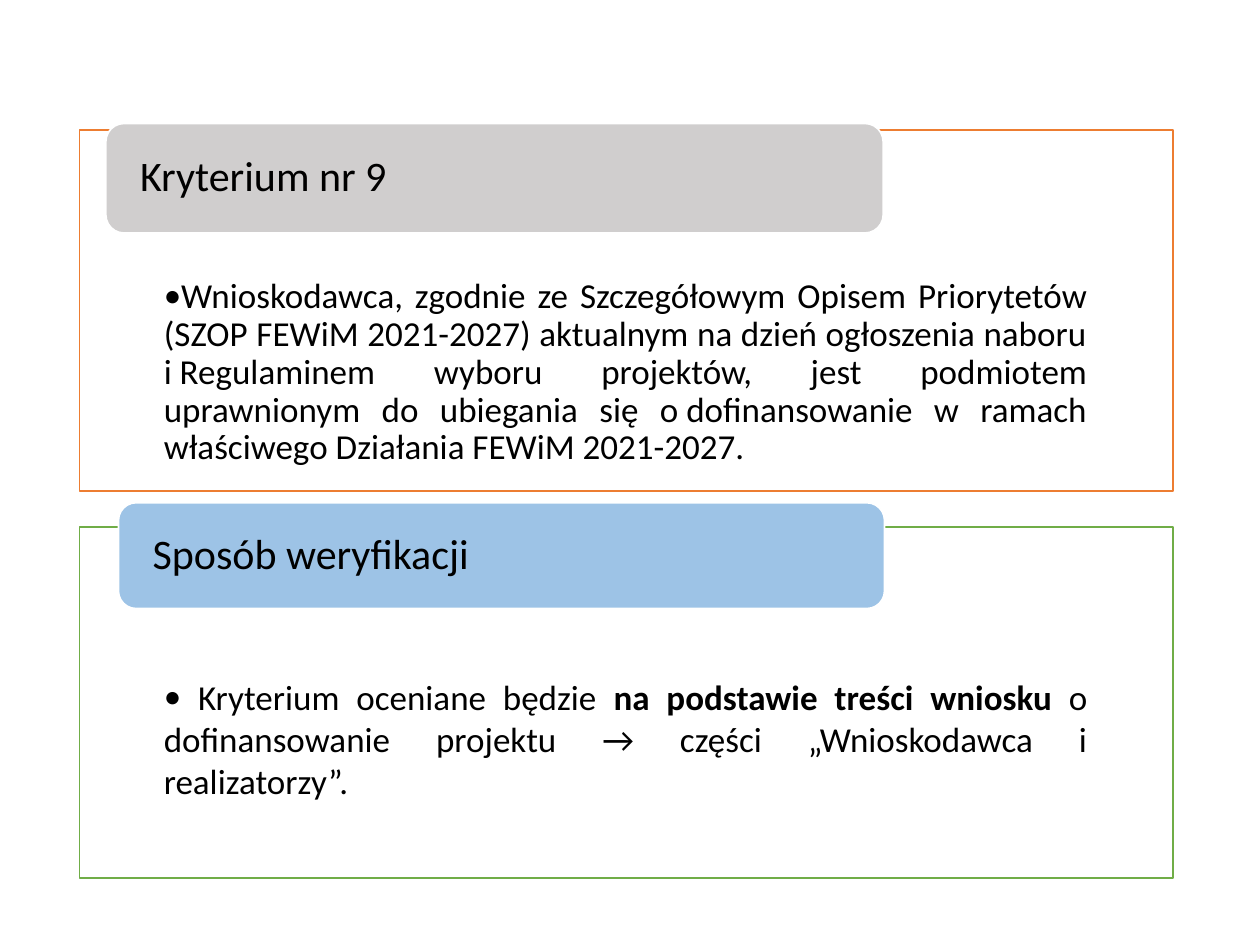
from pptx import Presentation
from pptx.dml.color import RGBColor
from pptx.enum.shapes import MSO_SHAPE as Shape
from pptx.enum.text import MSO_ANCHOR as Anchor, PP_ALIGN as Align
from pptx.oxml.ns import qn
from pptx.util import Inches, Pt
from lxml.etree import SubElement

COLORS = {
    "white": "FFFFFF",
    "black": "000000",
    "orange": "ED7D31",
    "green": "70AD47",
    "gray": "D0CECE",
    "blue": "9DC3E6",
}
FONT = "Calibri"
PANEL_LEFT, PANEL_WIDTH = 0.63, 8.68
HARD_SPACE = chr(160)

CRITERION = [
    ("Wnioskodawca, zgodnie ze Szczegółowym Opisem Priorytetów "
     "(SZOP FEWiM 2021-2027) aktualnym na dzień ogłoszenia naboru "
     f"i{HARD_SPACE}Regulaminem wyboru projektów, jest podmiotem uprawnionym do "
     f"ubiegania się o{HARD_SPACE}dofinansowanie w ramach właściwego Działania "
     "FEWiM 2021-2027.", False),
]
VERIFICATION = [
    (" ", True),
    ("Kryterium oceniane będzie ", False),
    ("na podstawie treści wniosku ", True),
    ("o dofinansowanie projektu → części „Wnioskodawca i realizatorzy”.", False),
]


def color(name):
    return RGBColor.from_string(COLORS[name])


def add_box(page, kind, place, fill, line, insets, anchor):
    box = page.shapes.add_shape(kind, *map(Inches, place))
    box.shadow.inherit = False
    box.fill.solid()
    box.fill.fore_color.rgb = color(fill)
    box.line.color.rgb = color(line)
    box.line.width = Pt(1)
    frame = box.text_frame
    frame.word_wrap = True
    frame.vertical_anchor = anchor
    (frame.margin_left, frame.margin_top,
     frame.margin_right, frame.margin_bottom) = map(Inches, insets)
    return box


def add_span(para, text, size, bold=False):
    span = para.add_run()
    span.text = text
    span.font.name = FONT
    span.font.size = Pt(size)
    span.font.bold = bold
    span.font.color.rgb = color("black")


def add_bullet(para, indent):
    properties = para._p.get_or_add_pPr()
    properties.set("marL", "0")
    properties.set("indent", str(Inches(indent)))
    SubElement(properties, qn("a:buFont")).set("typeface", FONT)
    SubElement(properties, qn("a:buChar")).set("char", "•")


def add_panel(page, top, height, line, spans, indent=0, spacing=None):
    box = add_box(page, Shape.RECTANGLE, (PANEL_LEFT, top, PANEL_WIDTH, height),
                  "white", line, (0.67, 1.18, 0.68, 0.16), Anchor.TOP)
    para = box.text_frame.paragraphs[0]
    add_bullet(para, indent)
    para.alignment = Align.JUSTIFY
    para.line_spacing = spacing
    for text, bold in spans:
        add_span(para, text, 20, bold)


def add_label(page, kind, place, fill, text):
    box = add_box(page, kind, place, fill, "white", (0.23, 0, 0.23, 0), Anchor.MIDDLE)
    para = box.text_frame.paragraphs[0]
    para.alignment = Align.LEFT
    para.line_spacing = 0.9
    add_span(para, text, 24)


def main():
    deck = Presentation()
    deck.slide_width, deck.slide_height = Inches(10), Inches(7.5)
    page = deck.slides.add_slide(deck.slide_layouts[6])

    add_panel(page, 1.03, 2.87, "orange", CRITERION, indent=-0.25, spacing=0.9)
    add_label(page, Shape.ROUNDED_RECTANGLE, (0.84, 0.98, 6.17, 0.87),
              "gray", "Kryterium nr 9")
    add_panel(page, 4.18, 2.79, "green", VERIFICATION)
    add_label(page, Shape.FLOWCHART_ALTERNATE_PROCESS, (0.94, 3.99, 6.08, 0.84),
              "blue", "Sposób weryfikacji")

    deck.save("out.pptx")


if __name__ == "__main__":
    main()
